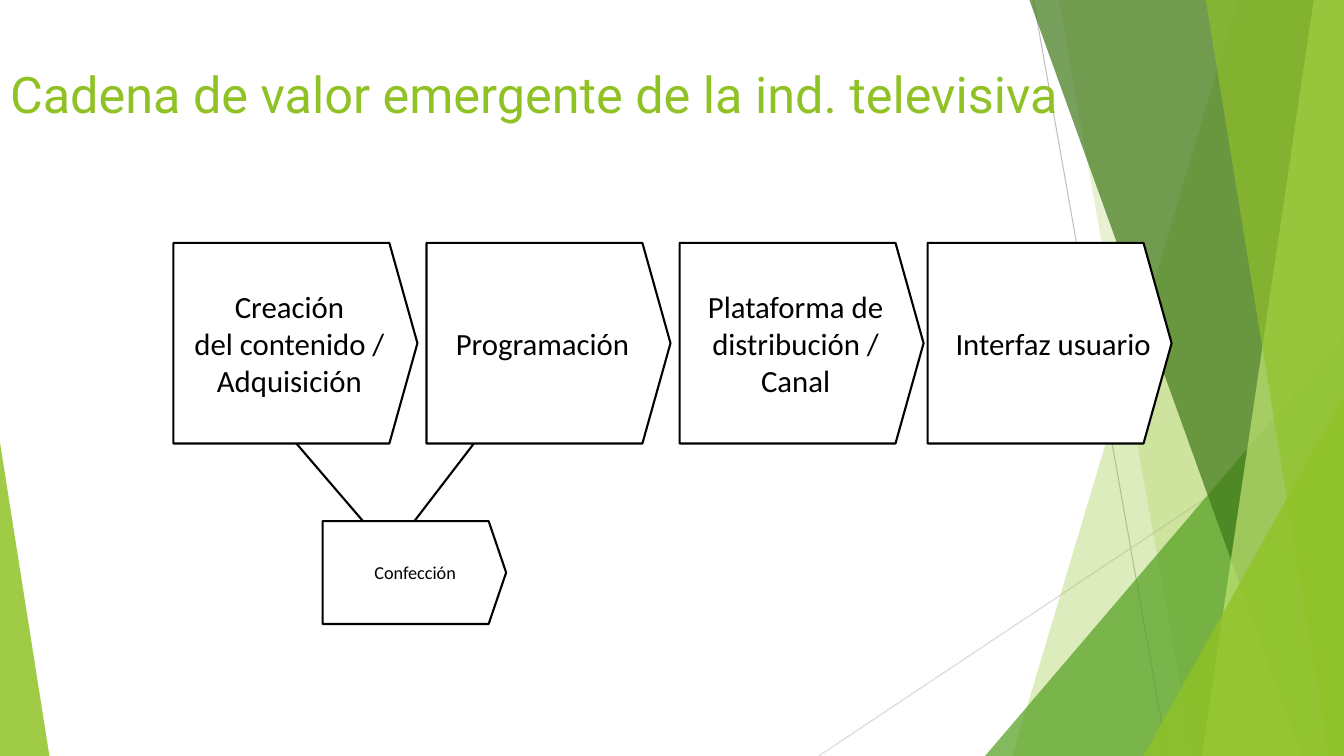
from pptx import Presentation
from pptx.dml.color import RGBColor
from pptx.enum.shapes import MSO_CONNECTOR, MSO_SHAPE
from pptx.enum.text import MSO_ANCHOR, MSO_AUTO_SIZE, PP_ALIGN
from pptx.oxml.ns import qn
from pptx.util import Pt
from lxml import etree

PX = 9144
WIDTH, HEIGHT = 1333, 750
STRAIGHT = MSO_CONNECTOR.STRAIGHT
TRIANGLE, PENTAGON = MSO_SHAPE.ISOSCELES_TRIANGLE, MSO_SHAPE.PENTAGON
MIDDLE, NO_FIT = MSO_ANCHOR.MIDDLE, MSO_AUTO_SIZE.NONE
LEFT, CENTER = PP_ALIGN.LEFT, PP_ALIGN.CENTER

TITLE = "Cadena de valor emergente de la ind. televisiva"
TITLE_BOX = (0, 30, 1098, 125)
TITLE_FONT = {"name": "Roboto", "size": Pt(36), "bold": False}

RAYS = [((1025, 0), (1158, 750), "BFBFBF"), ((1333, 403), (812, 750), "D9D9D9")]
FACETS = [
    ("band", 1228, 1004, "90C226", 30),
    ("band", 1050, 1183, "90C226", 20),
    ("triangle", (977, 333, 356, 417), 1, "54A021", 72),
    ("band", 1021, 1291, "3F7819", 70),
    ("band", 1303, 1192, "C0E474", 70),
    ("band", 1196, 1318, "90C226", 65),
    ("triangle", (1134, 393, 199, 357), 1, "90C226", 80),
    ("triangle", (0, 439, 49, 311), 0, "90C226", 85),
]

STAGE_TOP, STAGE_WIDTH, STAGE_HEIGHT = 241, 242, 199
STAGES = [
    (172, ["Creación", "del contenido /", "Adquisición"], 6),
    (423, ["Programación"], 6),
    (674, ["Plataforma de", "distribución /", "Canal"], 6),
    (920, ["Interfaz usuario"], 25),
]
SUPPORT = ((320, 517, 182, 102), ["Confección"], 14)
LINKS = [((294, 440), (360, 517)), ((411, 517), (470, 440))]


def color(value):
    return RGBColor.from_string(value)


def scaled(values):
    return [value * PX for value in values]


def apply(target, values):
    for name, value in values.items():
        setattr(target, name, value)


def add_line(slide, start, end, line_color, width):
    line = slide.shapes.add_connector(STRAIGHT, *scaled(start + end))
    line.line.color.rgb = color(line_color)
    line.line.width = Pt(width)
    etree.SubElement(line._element.spPr, qn("a:effectLst"))


def fill_facet(shape, fill_color, opacity):
    shape.shadow.inherit = False
    shape.line.fill.background()
    shape.fill.solid()
    shape.fill.fore_color.rgb = color(fill_color)
    tint = shape._element.spPr.find(".//" + qn("a:srgbClr"))
    etree.SubElement(tint, qn("a:alpha")).set("val", str(opacity * 1000))


def add_band(slide, top_left, bottom_left):
    builder = slide.shapes.build_freeform(top_left, 0, scale=PX)
    builder.add_line_segments([(WIDTH, 0), (WIDTH, HEIGHT), (bottom_left, HEIGHT)])
    return builder.convert_to_shape()


def add_triangle(slide, box, apex):
    triangle = slide.shapes.add_shape(TRIANGLE, *scaled(box))
    triangle.adjustments[0] = apex
    return triangle


def add_stage(slide, box, lines, left_margin, size, point):
    stage = slide.shapes.add_shape(PENTAGON, *scaled(box))
    stage.adjustments[0] = point
    stage.shadow.inherit = False
    stage.fill.solid()
    stage.fill.fore_color.rgb = color("FFFFFF")
    stage.line.color.rgb = color("000000")
    stage.line.width = Pt(1.5)
    frame = stage.text_frame
    apply(frame, {
        "word_wrap": True, "vertical_anchor": MIDDLE,
        "margin_left": left_margin * PX, "margin_right": 4 * PX,
        "margin_top": 5 * PX, "margin_bottom": 5 * PX,
    })
    frame.text = "\n".join(lines)
    for para in frame.paragraphs:
        para.alignment = CENTER
        apply(para.runs[0].font, {"name": "Calibri", "size": Pt(size)})
        para.runs[0].font.color.rgb = color("000000")


def place_title(slide):
    title = slide.shapes.title
    apply(title, dict(zip(("left", "top", "width", "height"), scaled(TITLE_BOX))))
    frame = title.text_frame
    frame.text = TITLE
    apply(frame, {"word_wrap": True, "auto_size": NO_FIT, "vertical_anchor": MIDDLE})
    para = frame.paragraphs[0]
    para.alignment = LEFT
    apply(para.runs[0].font, TITLE_FONT)
    para.runs[0].font.color.rgb = color("90C226")
    slide.shapes._spTree.append(title._element)


def main():
    deck = Presentation()
    apply(deck, {"slide_width": WIDTH * PX, "slide_height": HEIGHT * PX})
    slide = deck.slides.add_slide(deck.slide_layouts[5])

    for start, end, line_color in RAYS:
        add_line(slide, start, end, line_color, 0.75)
    makers = {"band": add_band, "triangle": add_triangle}
    for kind, first, second, fill_color, opacity in FACETS:
        fill_facet(makers[kind](slide, first, second), fill_color, opacity)

    place_title(slide)
    for left, lines, margin in STAGES:
        box = (left, STAGE_TOP, STAGE_WIDTH, STAGE_HEIGHT)
        add_stage(slide, box, lines, margin, 22, 0.14)
    add_stage(slide, *SUPPORT, 13, 0.17)
    for start, end in LINKS:
        add_line(slide, start, end, "000000", 1.5)

    deck.save("out.pptx")


if __name__ == "__main__":
    main()
